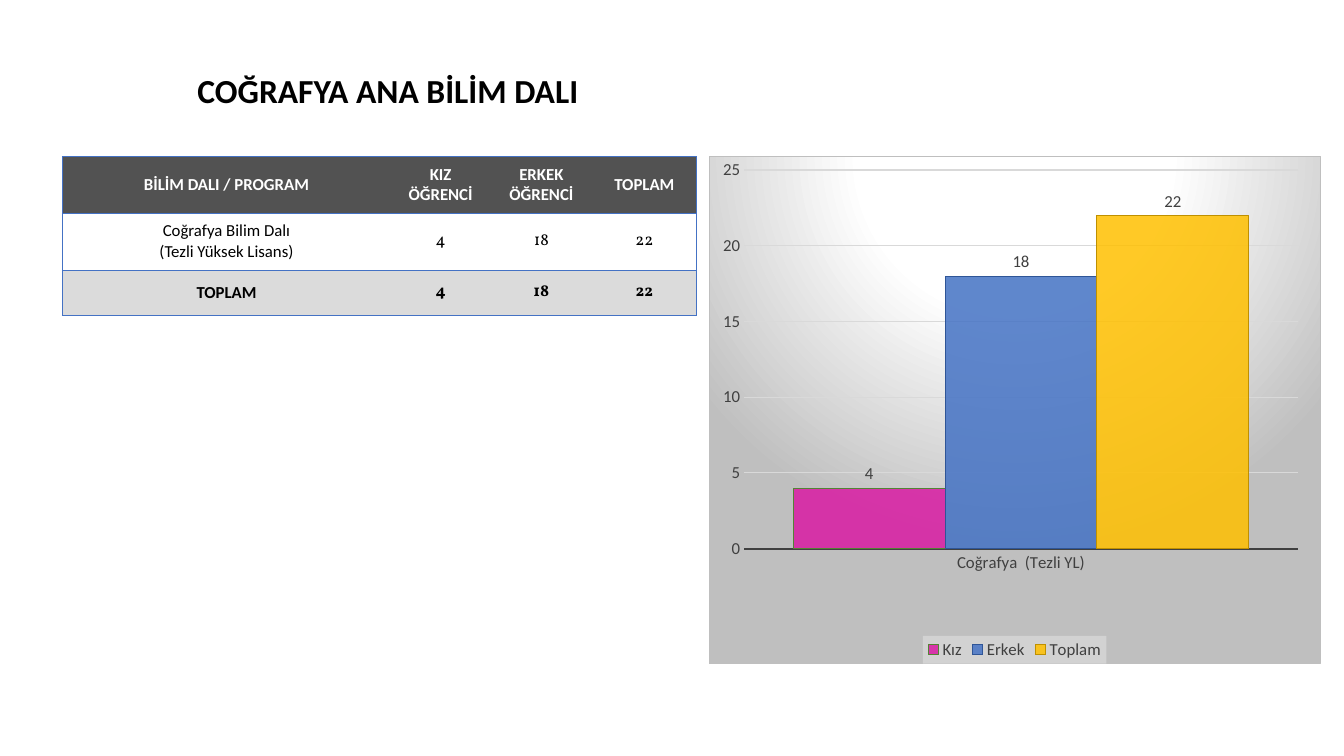
from lxml import etree
from pptx import Presentation
from pptx.chart.data import CategoryChartData
from pptx.dml.color import RGBColor
from pptx.enum.chart import XL_CHART_TYPE, XL_LABEL_POSITION, XL_LEGEND_POSITION, XL_TICK_MARK
from pptx.enum.text import MSO_ANCHOR, PP_ALIGN
from pptx.oxml import parse_xml
from pptx.oxml.ns import nsdecls, qn
from pptx.util import Cm, Pt

COLUMNS = XL_CHART_TYPE.COLUMN_CLUSTERED
OUTSIDE = XL_LABEL_POSITION.OUTSIDE_END
BOTTOM = XL_LEGEND_POSITION.BOTTOM
NO_TICK = XL_TICK_MARK.NONE
TOP, MIDDLE = MSO_ANCHOR.TOP, MSO_ANCHOR.MIDDLE
LEFT, CENTER = PP_ALIGN.LEFT, PP_ALIGN.CENTER

BLACK = RGBColor(0x00, 0x00, 0x00)
WHITE = RGBColor(0xFF, 0xFF, 0xFF)
HEADER_GREY = RGBColor(0x52, 0x52, 0x52)
TOTAL_GREY = RGBColor(0xDB, 0xDB, 0xDB)
LABEL_GREY = RGBColor(0x40, 0x40, 0x40)
GRID_GREY = RGBColor(0xD9, 0xD9, 0xD9)
FRAME_GREY = RGBColor(0xBF, 0xBF, 0xBF)
LEGEND_GREY = RGBColor(0xF2, 0xF2, 0xF2)
BLUE = RGBColor(0x44, 0x72, 0xC4)
PINK = RGBColor(0xD9, 0x1B, 0xA3)
GOLD = RGBColor(0xFF, 0xC0, 0x00)
DARK_GREEN = RGBColor(0x54, 0x82, 0x35)
DARK_BLUE = RGBColor(0x2F, 0x55, 0x97)
DARK_GOLD = RGBColor(0xBF, 0x90, 0x00)

TEXT_FONT, NUMBER_FONT = "Calibri", "Vollkorn"
TITLE_BOX = (Cm(4.72), Cm(1.63), Cm(20.24), Cm(2.31))
TABLE_BOX = (Cm(1.57), Cm(3.94), Cm(15.98), Cm(4))
CHART_BOX = (Cm(17.86), Cm(3.94), Cm(15.42), Cm(12.8))
COLUMN_WIDTHS = (8.28, 2.51, 2.57, 2.62)
ROW_HEIGHTS = (1.43, 1.43, 1.14)
ROWS = (
    ("BİLİM DALI / PROGRAM", "KIZ ÖĞRENCİ", "ERKEK ÖĞRENCİ", "TOPLAM"),
    ("Coğrafya Bilim Dalı\n(Tezli Yüksek Lisans)", "4", "18", "22"),
    ("TOPLAM", "4", "18", "22"),
)
ROW_STYLES = ((HEADER_GREY, WHITE, True), (None, BLACK, False), (TOTAL_GREY, BLACK, True))
SERIES = (
    ("Kız", 4, PINK, DARK_GREEN),
    ("Erkek", 18, BLUE, DARK_BLUE),
    ("Toplam", 22, GOLD, DARK_GOLD),
)


def format_font(font, size=12, name=TEXT_FONT, color=LABEL_GREY, bold=False):
    """Set the face, size, weight and colour of a font."""
    font.name, font.size, font.bold = name, Pt(size), bold
    font.color.rgb = color


def write_text(frame, text, align=CENTER, **font_format):
    """Write one formatted paragraph for each line of the text."""
    frame.text = text
    for para in frame.paragraphs:
        para.alignment = align
        for span in para.runs:
            format_font(span.font, **font_format)


def place_title(page, box):
    """Move the title placeholder to its box and fill it."""
    title = page.shapes.title
    title.left, title.top, title.width, title.height = box
    frame = title.text_frame
    frame.word_wrap = True
    frame.vertical_anchor = TOP
    write_text(frame, "COĞRAFYA ANA BİLİM DALI", LEFT, size=24, color=BLACK, bold=True)


def set_borders(cell, sides):
    """Draw thin blue borders on the given sides and clear the others."""
    properties = cell._tc.get_or_add_tcPr()
    for index, side in enumerate("LRTB"):
        paint = f'<a:solidFill><a:srgbClr val="{BLUE}"/></a:solidFill>' if side in sides else "<a:noFill/>"
        border = parse_xml(f'<a:ln{side} {nsdecls("a")} w="{Pt(0.5)}">{paint}</a:ln{side}>')
        properties.insert(index, border)


def place_table(page, box):
    """Add the table of student counts."""
    table = page.shapes.add_table(len(ROWS), len(COLUMN_WIDTHS), *box).table
    for column, width in zip(table.columns, COLUMN_WIDTHS):
        column.width = Cm(width)
    for row, height, texts, (fill, color, bold) in zip(table.rows, ROW_HEIGHTS, ROWS, ROW_STYLES):
        row.height = Cm(height)
        for index, (cell, text) in enumerate(zip(row.cells, texts)):
            cell.vertical_anchor = MIDDLE
            cell.margin_left = cell.margin_right = Cm(0.38)
            cell.margin_top = cell.margin_bottom = Cm(0.13)
            name = NUMBER_FONT if text.isdigit() else TEXT_FONT
            write_text(cell.text_frame, text, name=name, color=color, bold=bold)
            if fill is None:
                cell.fill.background()
            else:
                cell.fill.solid()
                cell.fill.fore_color.rgb = fill
            sides = "TB" + ("L" if index == 0 else "") + ("R" if index == len(texts) - 1 else "")
            set_borders(cell, sides)


def style_chart_area(chart):
    """Give the chart its gradient, legend background and plot position."""
    space = chart._chartSpace
    stops = "".join(
        f'<a:gs pos="{position * 1000}"><a:srgbClr val="{color}"/></a:gs>'
        for position, color in ((0, WHITE), (39, WHITE), (100, FRAME_GREY))
    )
    space.find(qn("c:chart")).addnext(parse_xml(
        f'<c:spPr {nsdecls("c", "a")}><a:gradFill><a:gsLst>{stops}</a:gsLst><a:path path="circle">'
        '<a:fillToRect l="50000" t="-80000" r="50000" b="180000"/></a:path></a:gradFill>'
        f'<a:ln w="{Pt(0.75)}"><a:solidFill><a:srgbClr val="{FRAME_GREY}"/></a:solidFill></a:ln></c:spPr>'
    ))
    space.find(".//" + qn("c:legend")).find(qn("c:overlay")).addnext(parse_xml(
        f'<c:spPr {nsdecls("c", "a")}><a:solidFill><a:srgbClr val="{LEGEND_GREY}">'
        '<a:alpha val="39000"/></a:srgbClr></a:solidFill></c:spPr>'
    ))
    plot_area = space.find(".//" + qn("c:plotArea"))
    for layout in plot_area.findall(qn("c:layout")):
        plot_area.remove(layout)
    settings = (("layoutTarget", "inner"), ("xMode", "edge"), ("yMode", "edge"),
                ("x", 0.057), ("y", 0.026), ("w", 0.907), ("h", 0.747))
    layout = etree.Element(qn("c:layout"))
    manual = etree.SubElement(layout, qn("c:manualLayout"))
    for tag, value in settings:
        etree.SubElement(manual, qn(f"c:{tag}")).set("val", str(value))
    plot_area.insert(0, layout)


def style_axes(chart):
    """Format the axes and the gridlines."""
    for axis in (chart.category_axis, chart.value_axis):
        axis.major_tick_mark = axis.minor_tick_mark = NO_TICK
        format_font(axis.tick_labels.font)
    category_line = chart.category_axis.format.line
    category_line.color.rgb, category_line.width = LABEL_GREY, Pt(1.5)
    values = chart.value_axis
    values.minimum_scale, values.maximum_scale, values.major_unit = 0, 25, 5
    values.format.line.fill.background()
    grid = values.major_gridlines.format.line
    grid.color.rgb, grid.width = GRID_GREY, Pt(0.75)


def place_chart(page, box):
    """Add the column chart of student counts."""
    data = CategoryChartData()
    data.categories = ["Coğrafya  (Tezli YL)"]
    for name, count, _, _ in SERIES:
        data.add_series(name, [count])
    chart = page.shapes.add_chart(COLUMNS, *box, data).chart
    chart.has_title = False
    format_font(chart.font, size=10, color=BLACK)
    chart.has_legend = True
    chart.legend.position = BOTTOM
    chart.legend.include_in_layout = False
    format_font(chart.legend.font)
    style_axes(chart)
    plot = chart.plots[0]
    plot.gap_width, plot.overlap, plot.vary_by_categories = 65, 0, False
    for series, (_, _, color, outline) in zip(plot.series, SERIES):
        series.format.fill.solid()
        series.format.fill.fore_color.rgb = color
        paint = series._element.find(qn("c:spPr")).find(".//" + qn("a:srgbClr"))
        etree.SubElement(paint, qn("a:alpha")).set("val", "85000")
        series.format.line.color.rgb, series.format.line.width = outline, Pt(0.75)
        labels = series.data_labels
        labels.show_value, labels.position = True, OUTSIDE
        format_font(labels.font)
    style_chart_area(chart)


def main():
    """Build the slide and save the deck."""
    deck = Presentation()
    deck.slide_width, deck.slide_height = Cm(33.87), Cm(19.05)
    page = deck.slides.add_slide(deck.slide_layouts[5])
    place_title(page, TITLE_BOX)
    place_table(page, TABLE_BOX)
    place_chart(page, CHART_BOX)
    deck.save("out.pptx")


if __name__ == "__main__":
    main()
